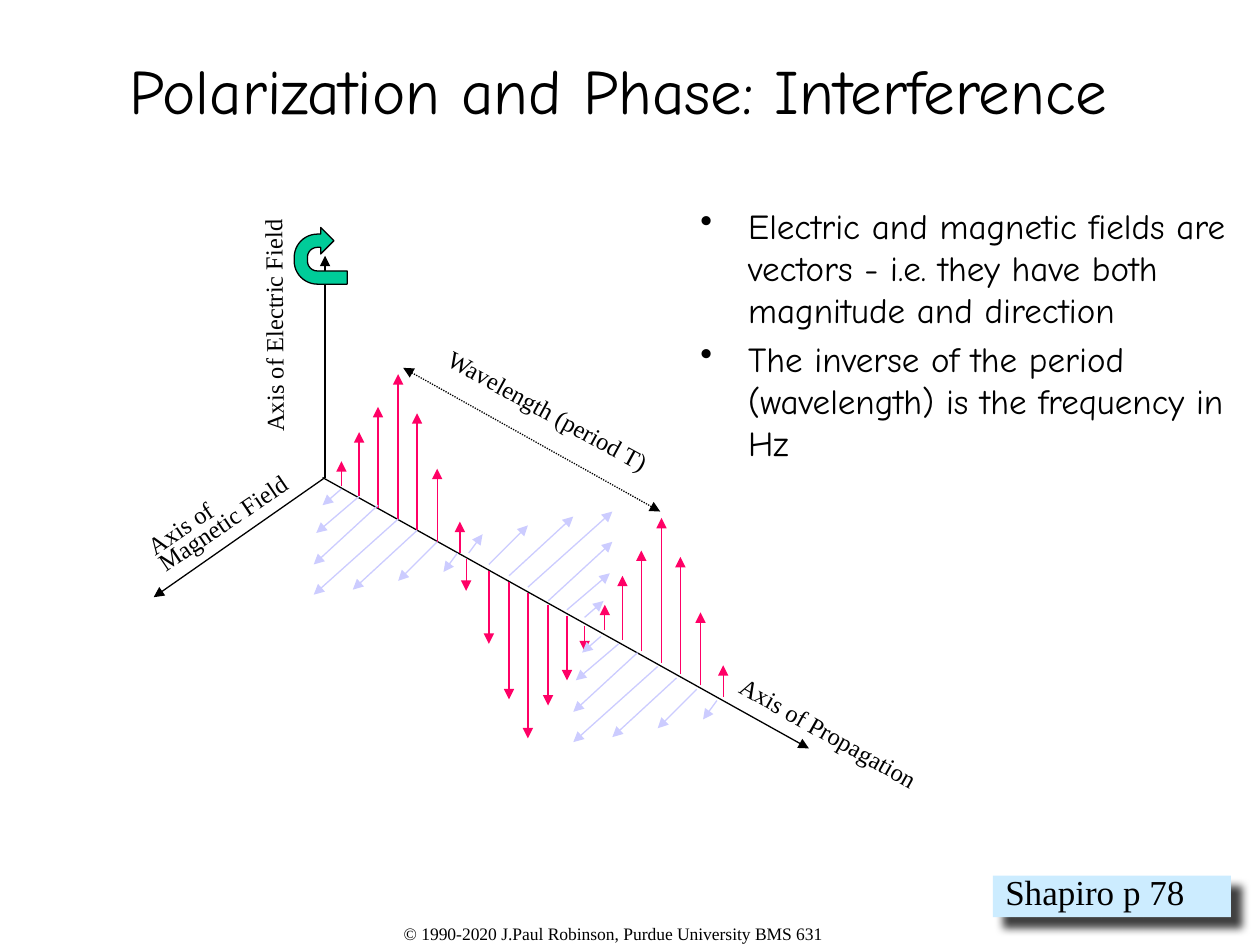
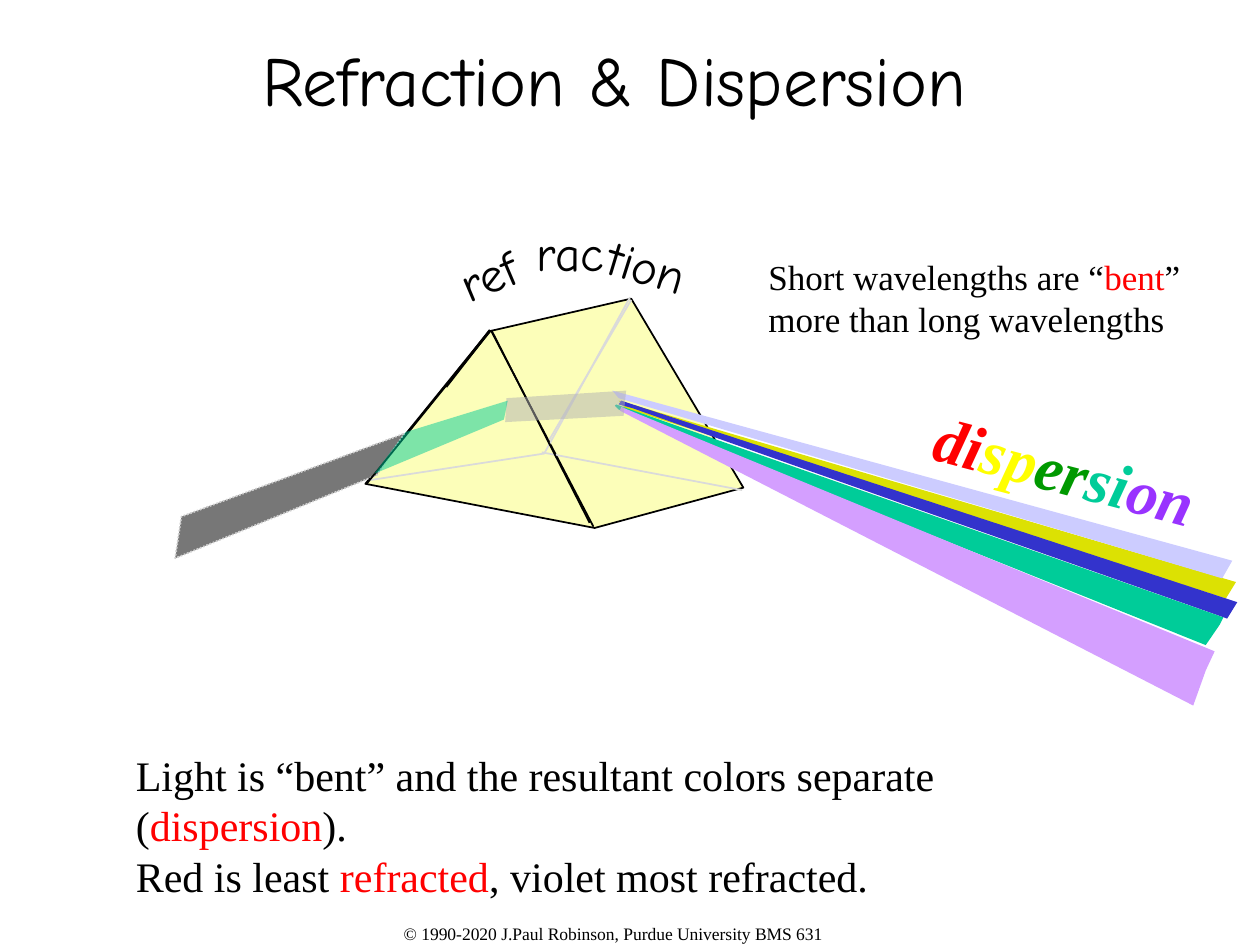
from lxml.etree import SubElement
from pptx import Presentation
from pptx.dml.color import RGBColor
from pptx.enum.dml import MSO_LINE
from pptx.enum.shapes import MSO_CONNECTOR, MSO_SHAPE
from pptx.enum.text import MSO_ANCHOR, MSO_AUTO_SIZE, PP_ALIGN
from pptx.oxml.ns import qn
from pptx.util import Inches, Pt

# Shared look
COLOURS = {
    "black": "000000", "red": "FF0000", "yellow": "FFFF00", "leaf": "009900",
    "teal": "00CC99", "purple": "9933FF", "pink": "FF0066", "lavender": "CCCCFF",
    "sky": "CCECFF", "cream": "FCFEB9", "pale": "DADADA", "gold": "DCE103",
    "blue": "3333CC", "violet": "D49FFF", "beam": "777777", "edge": "CECECE",
    "grey": "B2B2B2",
}
SERIF, HAND = "Times New Roman", "Comic Neue"
FOOTER = "© 1990-2020 J.Paul Robinson, Purdue University BMS 631"

# Slide 1: titles, bullets and labels
WAVE_TITLE = ("Polarization and Phase: Interference", (0.66, 0.2, 8.5, 1.01), 36)
WAVE_BULLETS = [
    "Electric and magnetic fields are vectors - i.e. they have both magnitude and direction",
    "The inverse of the period (wavelength) is the frequency in Hz",
]
AXIS_LABELS = [  # lines, place, rotation, spacing of the last line
    (["Wavelength (period T)"], (3.34, 3.2, 2.42, 0.33), 28.6, None),
    (["Axis of", "Magnetic Field"], (1.02, 3.82, 1.46, 0.47), 326, 0.1),
    (["Axis of Propagation"], (5.63, 5.89, 2.51, 0.26), 29.5, 0.7),
    (["Axis of Electric Field"], (0.94, 2.14, 2.51, 0.26), 269.5, 0.7),
]
AXES = [  # start, end
    ((2.58, 3.79), (2.58, 2.03)),
    ((2.56, 3.79), (6.42, 5.94)),
    ((2.58, 3.79), (1.22, 4.74)),
]
WAVELENGTH = ((3.2, 2.92), (5.24, 4.06))

# First half period of each field: x, y, then the vector's reach
ELECTRIC = [
    (2.71, 3.86, 0, -0.2), (2.85, 3.94, 0, -0.51), (3, 4.03, 0, -0.8),
    (3.16, 4.12, 0, -1.15), (3.31, 4.21, 0, -0.93), (3.47, 4.3, 0, -0.58),
    (3.65, 4.39, 0, -0.25),
]
MAGNETIC = [
    (2.71, 3.88, -0.15, 0.13), (2.85, 3.94, -0.34, 0.29), (3, 4.01, -0.51, 0.47),
    (3.16, 4.12, -0.67, 0.6), (3.31, 4.21, -0.51, 0.47), (3.47, 4.3, -0.31, 0.31),
    (3.63, 4.39, -0.11, 0.15),
]
FIELDS = [  # vectors, colour, shift to next period, sum of opposite points
    (ELECTRIC, "pink", (2.09, 1.14), (7.35, 8.83)),
    (MAGNETIC, "lavender", (2.06, 1.17), (7.35, 8.78)),
]

# Slide 2: texts as (text, colour) spans
PRISM_TITLE = ("Refraction & Dispersion", (1.47, 0, 6.81, 1.25), 40)
SUMMARY = [
    [("Light is “bent” and the resultant colors separate (", "black"),
     ("dispersion", "red"), (").", "black")],
    [("Red is least ", "black"), ("refracted", "red"),
     (", violet most refracted.", "black")],
]
BENDING = [[("Short wavelengths are “", "black"), ("bent", "red"),
            ("” more than long wavelengths", "black")]]
DISPERSION = [[("di", "red"), ("sp", "yellow"), ("er", "leaf"),
               ("si", "teal"), ("on", "purple")]]
ARC_WORD = [  # text, place, rotation
    ("ref", (3.51, 1.68, 1.76, 0.57), 337),
    ("rac", (4.16, 1.72, 0.88, 0.57), 0),
    ("tion", (4.73, 1.85, 0.98, 0.57), 16.8),
]

# Prism and rays from back to front: outline, format
FRONT_EDGE = {"line": "black", "weight": 1}
BACK_EDGE = {"line": "pale", "weight": 1}
PRISM = [
    ([(5.01, 2.37), (3.88, 2.63), (2.9, 3.84), (4.72, 4.19), (5.9, 3.87)],
     {"fill": "cream", **FRONT_EDGE}),
    ([(3.9, 2.63), (4.71, 4.18)], FRONT_EDGE),
    ([(2.94, 3.81), (4.32, 3.6), (5, 2.36)], BACK_EDGE),
    ([(5.89, 3.89), (4.3, 3.59)], BACK_EDGE),
    ([(4.96, 3.24), (4.91, 3.18), (9.81, 4.62), (9.73, 4.75)], {"fill": "gold"}),
    ([(4.91, 3.21), (4.93, 3.18), (9.82, 4.78), (9.74, 4.91), (5.02, 3.24)],
     {"fill": "blue"}),
    ([(4.88, 3.22), (4.89, 3.21), (9.71, 4.9), (9.68, 4.96), (9.57, 5.12), (4.91, 3.25)],
     {"fill": "teal"}),
    ([(4.91, 3.16), (4.86, 3.1), (9.78, 4.45), (9.7, 4.59)], {"fill": "lavender"}),
    ([(4.92, 3.26), (4.93, 3.23), (9.64, 5.17), (9.57, 5.32), (9.47, 5.6)],
     {"fill": "violet"}),
    ([(3.21, 3.44), (2.99, 3.77), (1.39, 4.43), (1.44, 4.1)],
     {"fill": "beam", "line": "edge", "weight": 1, "dash": True}),
    ([(3.9, 2.62), (4.68, 4.15)], FRONT_EDGE),
    ([(5.01, 2.38), (4.36, 3.49)], BACK_EDGE),
    ([(3.89, 2.62), (3.54, 3.07)], {"line": "black", "weight": 1.5}),
    ([(3.89, 2.63), (2.91, 3.84)], FRONT_EDGE),
    ([(4.02, 3.16), (4.97, 3.1), (4.95, 3.3), (4.01, 3.35)],
     {"fill": "grey", "alpha": 50}),
    ([(4.03, 3.18), (3.22, 3.43), (2.97, 3.76), (4, 3.33)],
     {"fill": "teal", "alpha": 50}),
]


def colour(name):
    return RGBColor.from_string(COLOURS[name])


def inches(values):
    return [Inches(value) for value in values]


def write(box, lines, size, font=SERIF, align=None, anchor=MSO_ANCHOR.TOP,
          grow=True, bold=None, italic=None):
    """Fill a box with lines of (text, colour) spans and return its paragraphs."""
    frame = box.text_frame
    frame.word_wrap = True
    frame.vertical_anchor = anchor
    frame.auto_size = MSO_AUTO_SIZE.SHAPE_TO_FIT_TEXT if grow else MSO_AUTO_SIZE.NONE
    look = {"name": font, "size": Pt(size), "bold": bold, "italic": italic}
    paras = []
    for line in lines:
        para = frame.add_paragraph() if paras else frame.paragraphs[0]
        para.alignment = align or PP_ALIGN.LEFT
        for text, name in line:
            span = para.add_run()
            span.text = text
            span.font.color.rgb = colour(name)
            for key, value in look.items():
                setattr(span.font, key, value)
        paras.append(para)
    return paras


def add_text(page, lines, place, size, rotation=0, **options):
    box = page.shapes.add_textbox(*inches(place))
    box.rotation = rotation
    return write(box, lines, size, **options)


def plain(text):
    return [(text, "black")]


def add_page(deck, title):
    """Blank page with the shared footer and title."""
    page = deck.slides.add_slide(deck.slide_layouts[6])
    add_text(page, [plain(FOOTER)], (1.24, 7.28, 7.25, 0.33), 10,
             align=PP_ALIGN.CENTER, grow=False)
    text, place, size = title
    add_text(page, [plain(text)], place, size, font=HAND, align=PP_ALIGN.CENTER,
             anchor=MSO_ANCHOR.MIDDLE, grow=False)
    return page


def style_line(line, name, weight, dash=False):
    line.color.rgb = colour(name)
    line.width = Pt(weight)
    if dash:
        line.dash_style = MSO_LINE.ROUND_DOT


def add_line(page, start, end, name, weight=0.75, dash=False, ends=()):
    line = page.shapes.add_connector(MSO_CONNECTOR.STRAIGHT, *inches(start + end))
    style_line(line.line, name, weight, dash)
    properties = line._element.find(qn("p:spPr"))
    for tag in ends:
        SubElement(properties.find(qn("a:ln")), qn(tag), type="triangle")
    SubElement(properties, qn("a:effectLst"))


def add_outline(page, points, fill=None, alpha=None, line=None, weight=1, dash=False):
    corners = [inches(point) for point in points]
    builder = page.shapes.build_freeform(*corners[0])
    builder.add_line_segments(corners[1:], close=fill is not None)
    shape = builder.convert_to_shape()
    shape.shadow.inherit = False
    if fill:
        shape.fill.solid()
        shape.fill.fore_color.rgb = colour(fill)
    else:
        shape.fill.background()
    if alpha:
        tint = shape._element.spPr.find(qn("a:solidFill")).find(qn("a:srgbClr"))
        SubElement(tint, qn("a:alpha"), val=str(alpha * 1000))
    if line:
        style_line(shape.line, line, weight, dash)
    else:
        shape.line.fill.background()


def add_preset(page, kind, place, fill):
    shape = page.shapes.add_shape(kind, *inches(place))
    shape.shadow.inherit = False
    shape.fill.solid()
    shape.fill.fore_color.rgb = colour(fill)
    shape.line.fill.background()
    return shape


def add_reference(page):
    """Page reference on a panel with a soft shadow."""
    panel = add_preset(page, MSO_SHAPE.RECTANGLE, (7.88, 6.95, 1.89, 0.33), "sky")
    write(panel, [plain("Shapiro p 78")], 20)[0].line_spacing = 0.7
    effects = panel._element.spPr.find(qn("a:effectLst"))
    shadow = SubElement(effects, qn("a:outerShdw"), blurRad=str(Pt(5)),
                        dist=str(Pt(8.5)), dir=str(45 * 60000), algn="tl", rotWithShape="0")
    tint = SubElement(shadow, qn("a:srgbClr"), val=COLOURS["black"])
    SubElement(tint, qn("a:alpha"), val="75000")


def build_wave_page(deck):
    page = add_page(deck, WAVE_TITLE)
    bullets = add_text(page, [plain(text) for text in WAVE_BULLETS],
                       (5.46, 1.57, 4.37, 2.12), 20, font=HAND, grow=False)
    for para in bullets:
        para.space_before = Pt(4)
        properties = para._p.get_or_add_pPr()
        properties.set("marL", str(Inches(0.38)))
        properties.set("indent", str(Inches(-0.38)))
        SubElement(properties, qn("a:buChar"), char="•")
    add_reference(page)

    # Axes, then each field: first half, next period, opposite half
    for start, end in AXES:
        add_line(page, start, end, "black", ends=["a:tailEnd"])
    for vectors, name, (shift_x, shift_y), (sum_x, sum_y) in FIELDS:
        halves = [(1, 0, 0), (1, shift_x, shift_y), (-1, sum_x, sum_y)]
        for sign, left, top in halves:
            for x, y, reach_x, reach_y in vectors:
                start = (left + sign * x, top + sign * y)
                end = (start[0] + sign * reach_x, start[1] + sign * reach_y)
                add_line(page, start, end, name, ends=["a:tailEnd"])
    add_line(page, *WAVELENGTH, "black", dash=True, ends=["a:headEnd", "a:tailEnd"])

    # Labels and turn arrow
    for lines, place, rotation, spacing in AXIS_LABELS:
        paras = add_text(page, [plain(text) for text in lines], place, 14, rotation)
        paras[-1].space_before = Pt(7)
        if spacing:
            paras[-1].line_spacing = spacing
    turn = add_preset(page, MSO_SHAPE.U_TURN_ARROW, (2.32, 1.82, 0.45, 0.42), "teal")
    turn.rotation = 270
    style_line(turn.line, "black", 0.75)


def build_prism_page(deck):
    page = add_page(deck, PRISM_TITLE)
    for points, look in PRISM:
        if len(points) == 2:
            add_line(page, *points, look["line"], look["weight"])
        else:
            add_outline(page, points, **look)
    add_text(page, SUMMARY, (0.98, 5.9, 8.2, 0.9), 24)
    add_text(page, DISPERSION, (7.3, 3.38, 2.36, 0.7), 36, 14.8, bold=True, italic=True)
    add_text(page, BENDING, (6, 1.98, 3.67, 0.77), 20)
    for text, place, rotation in ARC_WORD:
        add_text(page, [plain(text)], place, 28, rotation, font=HAND)


def main():
    deck = Presentation()
    deck.slide_width, deck.slide_height = Inches(10), Inches(7.5)
    build_wave_page(deck)
    build_prism_page(deck)
    deck.save("out.pptx")


if __name__ == "__main__":
    main()
